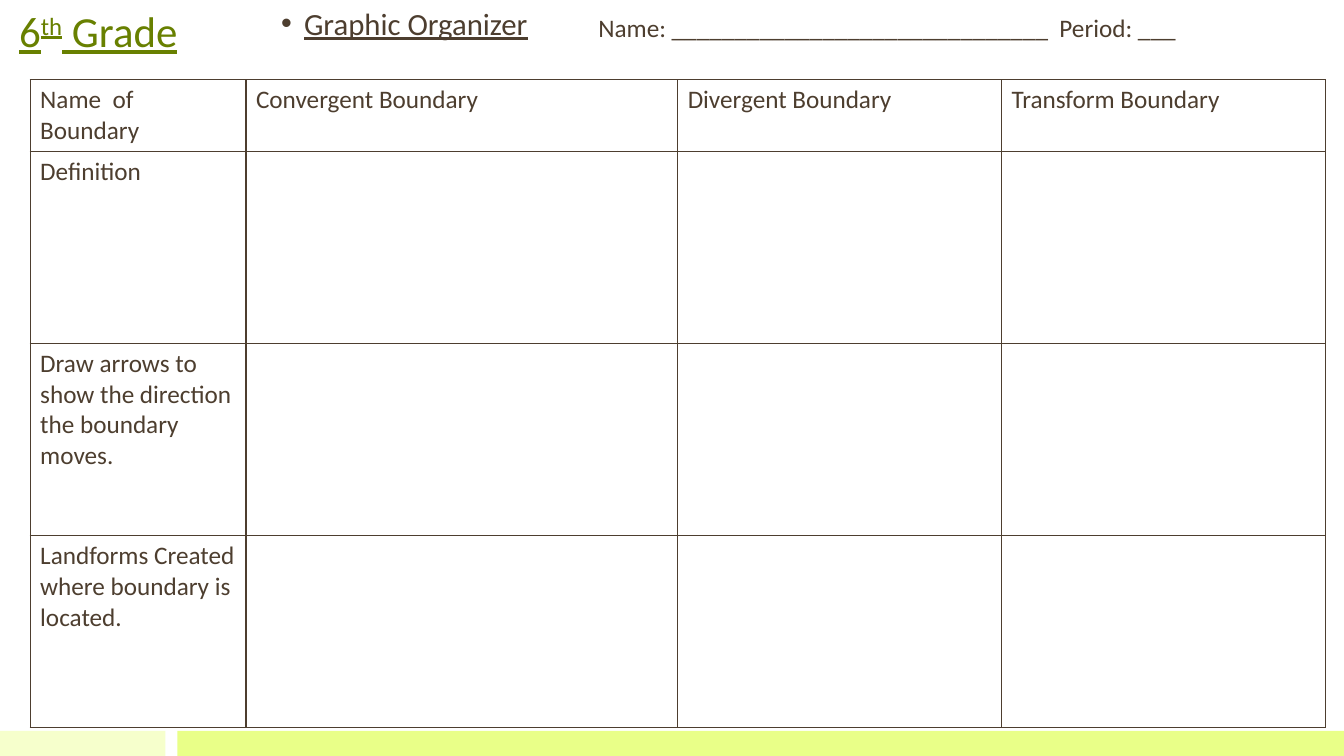
from dataclasses import dataclass

from lxml import etree
from pptx import Presentation
from pptx import util as u
from pptx.dml import color
from pptx.enum import shapes, text
from pptx.oxml import ns


@dataclass(frozen=True)
class Theme:
    """Colours, font and type sizes of the slide."""
    font: str = "Calibri"
    ink: str = "4D3E2F"
    green: str = "688000"
    pale: str = "F6FFCC"
    lime: str = "E9FF88"
    title: float = 30.6
    list: float = 22
    body: float = 18


THEME = Theme()
HEADS = ["Name  of Boundary", "Convergent Boundary", "Divergent Boundary", "Transform Boundary"]
TASKS = [
    "Definition",
    "Draw arrows to show the direction the boundary moves.",
    "Landforms Created where boundary is located.",
]
SHARES = [1 / 6, 1 / 3, 1 / 4, 1 / 4]


def place(shape, box):
    """Move a shape to a box of left, top, width and height in centimetres."""
    shape.left, shape.top, shape.width, shape.height = map(u.Cm, box)


def write(frame, words, size=THEME.body, tint=THEME.ink, under=None, raised=None):
    """Write one left-aligned paragraph, with an optional superscript part."""
    para = frame.paragraphs[0]
    para.alignment = text.PP_ALIGN.LEFT
    for part in words.partition(raised) if raised else [words]:
        run = para.add_run()
        run.text = part
        run.font.name = THEME.font
        run.font.size = u.Pt(size)
        run.font.underline = under
        run.font.color.rgb = color.RGBColor.from_string(tint)
        if part == raised:
            run._r.get_or_add_rPr().set("baseline", "30000")
    return para


def header(slide, box):
    """Place the grade title, the list heading and the name line."""
    left, top, width, height = box
    title, body = slide.placeholders
    place(title, (left, top, 26.04, height))
    title.text_frame.auto_size = text.MSO_AUTO_SIZE.NONE
    title.text_frame.vertical_anchor = text.MSO_ANCHOR.BOTTOM
    write(title.text_frame, "6th Grade", size=THEME.title, tint=THEME.green, under=True, raised="th")

    place(body, (left + 6.6, top, 12.8, 1.07))
    body.text_frame.auto_size = text.MSO_AUTO_SIZE.NONE
    para = write(body.text_frame, "Graphic Organizer", size=THEME.list, under=True)
    para.line_spacing = 0.8
    para.space_before = u.Pt(11)
    props = para._p.get_or_add_pPr()
    props.set("marL", str(u.Cm(0.58)))
    props.set("indent", str(u.Cm(-0.58)))

    line = slide.shapes.add_textbox(*map(u.Cm, (left + 14.6, top, width - 14.6, 1.02)))
    line.text_frame.word_wrap = True
    write(line.text_frame, "Name: " + "_" * 30 + "  Period: ___")


def border(cell):
    """Draw a thin line on all four sides of a cell."""
    props = cell._tc.get_or_add_tcPr()
    for spot, side in enumerate(["lnL", "lnR", "lnT", "lnB"]):
        line = etree.Element(ns.qn("a:" + side), w=str(u.Pt(1)))
        fill = etree.SubElement(line, ns.qn("a:solidFill"))
        etree.SubElement(fill, ns.qn("a:srgbClr"), val=THEME.ink)
        props.insert(spot, line)


def grid(slide, box):
    """Place the organizer table, with a short head row and equal task rows."""
    width, height = box[2:]
    head = 1.8
    rows = [HEADS] + [[task, "", "", ""] for task in TASKS]
    table = slide.shapes.add_table(len(rows), len(HEADS), *map(u.Cm, box)).table
    table.first_row = table.horz_banding = False
    for col, share in zip(table.columns, SHARES):
        col.width = u.Cm(width * share)
    for spot, (row, words) in enumerate(zip(table.rows, rows)):
        row.height = u.Cm((height - head) / len(TASKS) if spot else head)
        for cell, word in zip(row.cells, words):
            border(cell)
            cell.fill.background()
            if word:
                write(cell.text_frame, word)


def footer(slide, box):
    """Place the two colour bars, parted by a gap."""
    left, top, width, height = box
    short, gap = 4.17, 0.3
    start = short + gap
    for shift, span, tint in [(0, short, THEME.pale), (start, width - start, THEME.lime)]:
        spot = map(u.Cm, (left + shift, top, span, height))
        bar = slide.shapes.add_shape(shapes.MSO_SHAPE.RECTANGLE, *spot)
        bar.shadow.inherit = False
        bar.fill.solid()
        bar.fill.fore_color.rgb = color.RGBColor.from_string(tint)
        bar.line.fill.background()


def main():
    """Build the slide and save it."""
    deck = Presentation()
    deck.slide_width, deck.slide_height = u.Cm(33.87), u.Cm(19.05)
    slide = deck.slides.add_slide(deck.slide_layouts[1])
    footer(slide, (0, 18.42, 33.87, 0.63))
    header(slide, (0.23, 0.18, 29.71, 1.37))
    grid(slide, (0.76, 2.01, 32.64, 16.33))
    deck.save("out.pptx")


if __name__ == "__main__":
    main()
